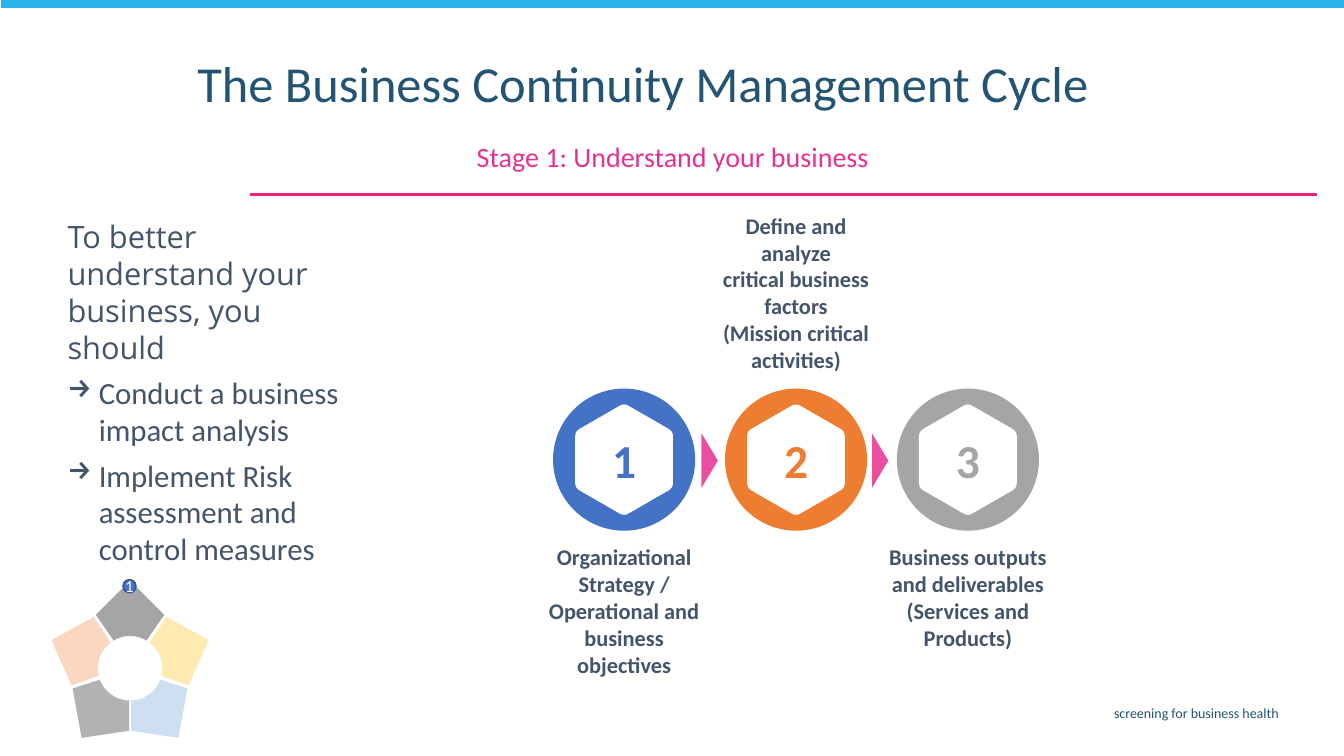
from math import atan2, cos, pi, sin

from lxml.etree import SubElement
from pptx import Presentation
from pptx.dml.color import RGBColor
from pptx.enum.shapes import MSO_CONNECTOR, MSO_SHAPE
from pptx.enum.text import MSO_ANCHOR, PP_ALIGN
from pptx.oxml.ns import qn
from pptx.util import Inches, Pt

COLORS = {
    "sky": "29B3E8", "rule": "EC2179", "navy": "245473", "pink": "E53292",
    "slate": "44546A", "blue": "4472C4", "orange": "ED7D31", "gray": "A5A5A5",
    "yellow": "FFC000", "light blue": "5B9BD5", "black": "000000",
    "white": "FFFFFF", "dark blue": "325491", "arrow": "E94EA1",
}
RGB = {name: RGBColor.from_string(code) for name, code in COLORS.items()}

prs = Presentation()
prs.slide_width, prs.slide_height = Inches(13.33), Inches(7.5)
slide = prs.slides.add_slide(prs.slide_layouts[6])
shapes = slide.shapes


def add_text(box, lines, size, color, align=PP_ALIGN.LEFT, side=0.1, edge=0.05,
             anchor=MSO_ANCHOR.TOP, **font_format):
    """Add a wrapped text box; box is left, top, width, height in inches."""
    frame = shapes.add_textbox(*map(Inches, box)).text_frame
    frame.text = lines
    frame_format = {
        "word_wrap": True, "vertical_anchor": anchor,
        "margin_left": Inches(side), "margin_right": Inches(side),
        "margin_top": Inches(edge), "margin_bottom": Inches(edge),
    }
    for name, value in frame_format.items():
        setattr(frame, name, value)
    for paragraph in frame.paragraphs:
        paragraph.alignment = align
        paragraph.font.color.rgb = RGB[color]
        for name, value in {"name": "Calibri", "size": Pt(size), **font_format}.items():
            setattr(paragraph.font, name, value)
    return frame


def add_outline(center_x, center_y, offsets, color):
    """Draw a filled closed outline from offsets around a center, in inches."""
    points = [(Inches(center_x + x), Inches(center_y + y)) for x, y in offsets]
    builder = shapes.build_freeform(*points[0], scale=1.0)
    builder.add_line_segments(points[1:], close=True)
    outline = builder.convert_to_shape()
    outline.shadow.inherit = False
    outline.fill.solid()
    outline.fill.fore_color.rgb = RGB[color]
    outline.line.fill.background()
    return outline


# Frame of the page
rule = shapes.add_connector(MSO_CONNECTOR.STRAIGHT, Inches(13.06), Inches(1.93),
                            Inches(2.48), Inches(1.93))
rule.line.color.rgb = RGB["rule"]
rule.line.width = Pt(1.5)
SubElement(rule._element.spPr, qn("a:effectLst"))

top_band = shapes.add_shape(MSO_SHAPE.RECTANGLE, Inches(0.01), Inches(-0.02),
                            Inches(13.34), Inches(0.1))
top_band.shadow.inherit = False
top_band.fill.solid()
top_band.fill.fore_color.rgb = RGB["sky"]
top_band.line.fill.background()

add_text((3.65, 6.94, 9.13, 0.29), "screening for business health", 10, "navy",
         PP_ALIGN.RIGHT)
title = add_text((1.86, 0.54, 9.68, 0.76), "The Business Continuity Management Cycle",
                 36, "navy")
subtitle = add_text((4.63, 1.37, 9.94, 0.54), "Stage 1: Understand your business",
                    20, "pink")
for heading in (title, subtitle):
    heading.paragraphs[0].line_spacing = 0.9

# Advice on the left
advice = add_text((0.58, 2.12, 2.97, 3.67), "To better understand your business, you should",
                  22, "slate", side=0.09, edge=0.04, name="Open Sans")
for action in ("Conduct a business impact analysis",
               "Implement Risk assessment and control measures"):
    paragraph = advice.add_paragraph()
    paragraph.text = action
    paragraph.space_before = Pt(6)
    properties = paragraph._p.get_or_add_pPr()
    properties.set("marL", str(Inches(0.31)))
    properties.set("indent", str(-Inches(0.31)))
    SubElement(properties, qn("a:buChar")).set("char", "→")
    action_format = {"name": "Calibri", "size": Pt(22)}
    for name, value in action_format.items():
        setattr(paragraph.font, name, value)
    paragraph.font.color.rgb = RGB["slate"]

# Five-part cycle: outer corners run clockwise, the inner edge follows a circle
CYCLE_X, CYCLE_Y, HOLE, ARC_STEPS = 1.29, 6.63, 0.32, 12
top_part = [(-0.16, -0.27), (-0.34, -0.53), (0, -0.87), (0.34, -0.53), (0.16, -0.27)]
upper_part = [(0.19, -0.25), (0.36, -0.51), (0.78, -0.28), (0.58, 0.17), (0.3, 0.07)]
lower_part = [(0.29, 0.11), (0.57, 0.2), (0.48, 0.69), (0.01, 0.62), (0.01, 0.31)]
cycle_parts = [
    (top_part, 1, "gray", 100),
    (upper_part, -1, "orange", 30),
    (upper_part, 1, "yellow", 30),
    (lower_part, 1, "light blue", 30),
    (lower_part, -1, "black", 30),
]
for corners, side, color, opacity in cycle_parts:
    start, end = (atan2(y, x) for x, y in (corners[-1], corners[0]))
    angles = [start + (end - start) * i / ARC_STEPS for i in range(ARC_STEPS + 1)]
    ring = corners + [(HOLE * cos(a), HOLE * sin(a)) for a in angles]
    part = add_outline(CYCLE_X, CYCLE_Y, [(side * x, y) for x, y in ring], color)
    if opacity < 100:
        fill_color = part._element.spPr.find(qn("a:solidFill"))[0]
        SubElement(fill_color, qn("a:alpha")).set("val", str(opacity * 1000))

marker = shapes.add_shape(MSO_SHAPE.OVAL, Inches(1.22), Inches(5.75),
                          Inches(0.13), Inches(0.13))
marker.shadow.inherit = False
marker.fill.solid()
marker.fill.fore_color.rgb = RGB["blue"]
marker.line.color.rgb = RGB["dark blue"]
marker.line.width = Pt(1)
marker_frame = marker.text_frame
for name in ("margin_left", "margin_right", "margin_top", "margin_bottom"):
    setattr(marker_frame, name, 0)
marker_frame.word_wrap = False
marker_frame.vertical_anchor = MSO_ANCHOR.MIDDLE
marker_frame.text = "1"
marker_label = marker_frame.paragraphs[0]
marker_label.alignment = PP_ALIGN.CENTER
marker_label.font.name = "Calibri"
marker_label.font.size = Pt(12)
marker_label.font.color.rgb = RGB["white"]

# Hexagon with softened corners
HEX_RADIUS, SOFTENING = 0.56, 0.09
hexagon = []
for corner in range(6):
    (before_x, before_y), (x, y), (after_x, after_y) = [
        (HEX_RADIUS * sin(n * pi / 3), -HEX_RADIUS * cos(n * pi / 3))
        for n in (corner - 1, corner, corner + 1)]
    for t in (0, 0.25, 0.5, 0.75, 1):
        back, ahead = SOFTENING * (1 - t) ** 2, SOFTENING * t ** 2
        hexagon.append((x + back * (before_x - x) + ahead * (after_x - x),
                        y + back * (before_y - y) + ahead * (after_y - y)))

# Three steps
STEP_X, STEP_GAP, STEP_Y, DISC, CAPTION = 6.19, 1.705, 4.56, 1.41, 1.62
steps = [
    ("blue", "Organizational Strategy /\vOperational and business\vobjectives",
     5.34, 1.45, MSO_ANCHOR.TOP),
    ("orange", "Define and analyze\vcritical business\vfactors\v(Mission critical\vactivities)",
     2.05, 1.7, MSO_ANCHOR.BOTTOM),
    ("gray", "Business outputs\vand deliverables\v(Services and Products)",
     5.34, 1.2, MSO_ANCHOR.TOP),
]
for index, (color, caption, caption_top, caption_height, anchor) in enumerate(steps):
    center = STEP_X + index * STEP_GAP
    disc = shapes.add_shape(MSO_SHAPE.OVAL, Inches(center - DISC / 2),
                            Inches(STEP_Y - DISC / 2), Inches(DISC), Inches(DISC))
    disc.shadow.inherit = False
    disc.fill.solid()
    disc.fill.fore_color.rgb = RGB[color]
    disc.line.fill.background()
    add_outline(center, STEP_Y, hexagon, "white")
    add_text((center - 0.22, 4.22, 0.44, 0.67), str(index + 1), 33.8, color,
             PP_ALIGN.CENTER, side=0, anchor=MSO_ANCHOR.MIDDLE, bold=True)
    add_text((center - CAPTION / 2, caption_top, CAPTION, caption_height), caption,
             16, "slate", PP_ALIGN.CENTER, side=0, anchor=anchor, bold=True)

for arrow_left in (6.74, 8.43):
    arrow = shapes.add_shape(MSO_SHAPE.ISOSCELES_TRIANGLE, Inches(arrow_left),
                             Inches(4.48), Inches(0.6), Inches(0.18))
    arrow.rotation = 90
    arrow.shadow.inherit = False
    arrow.fill.solid()
    arrow.fill.fore_color.rgb = RGB["arrow"]
    arrow.line.color.rgb = RGB["white"]
    arrow.line.width = Pt(1)

prs.save("out.pptx")
